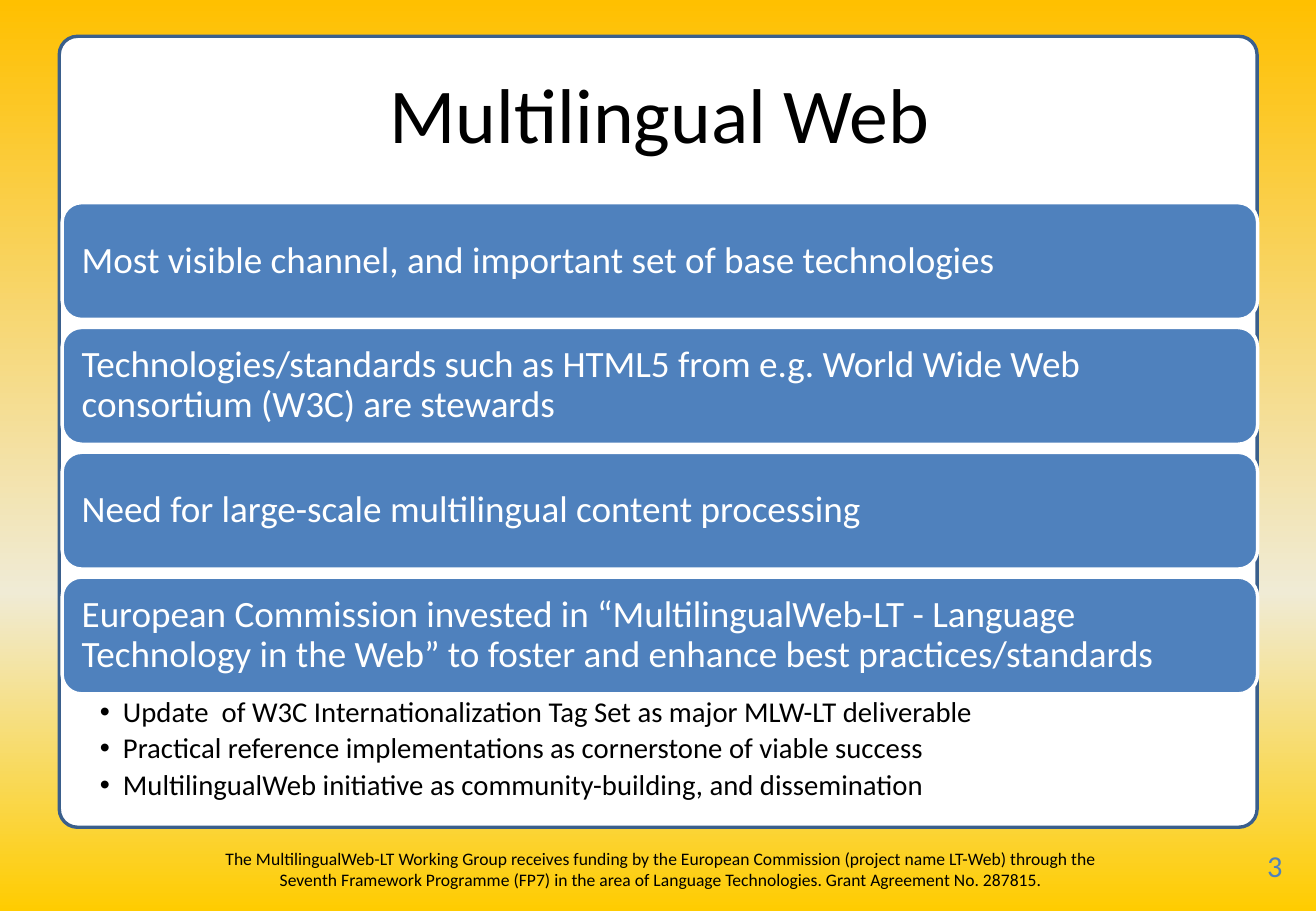
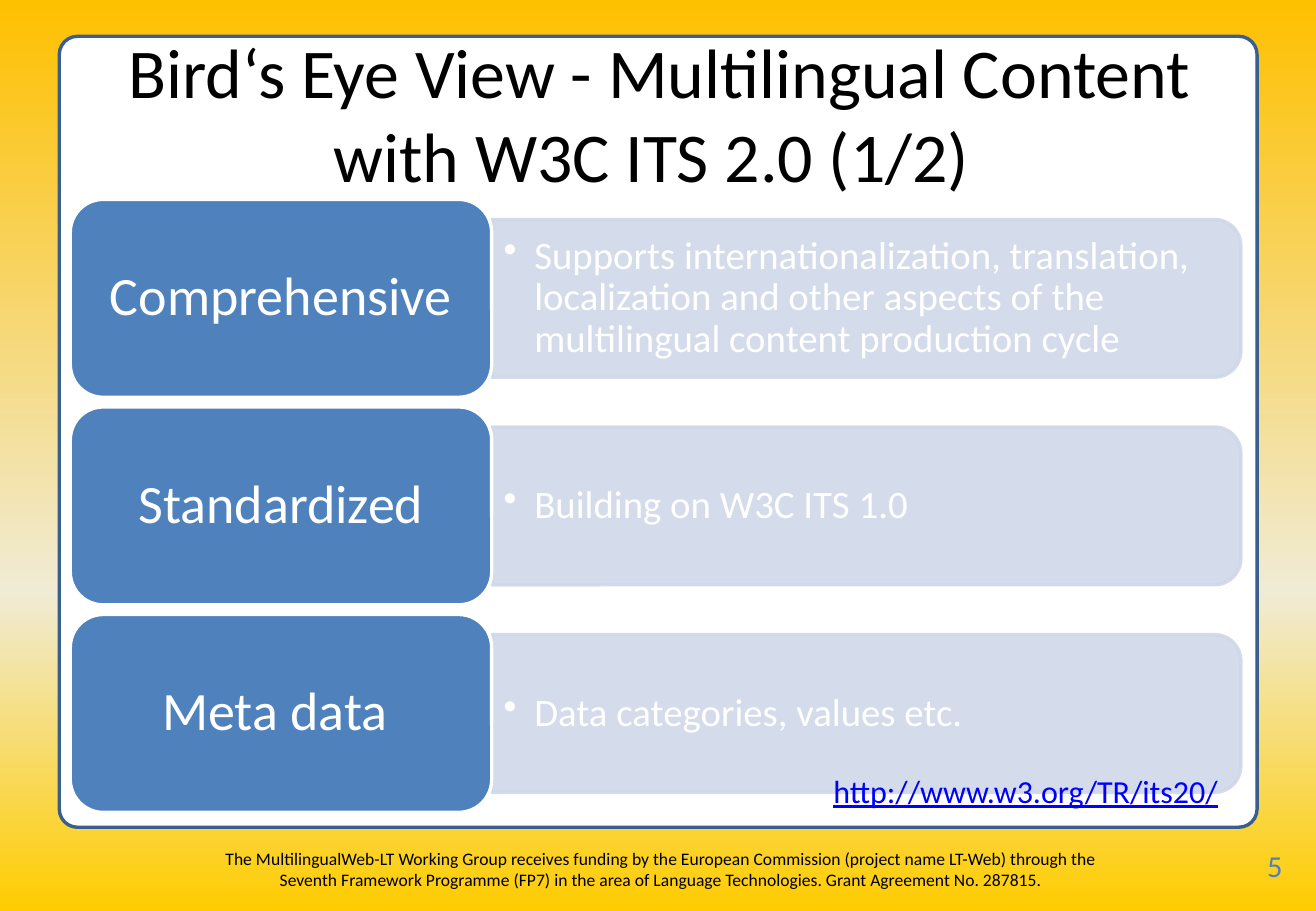
from lxml.etree import SubElement
from pptx import Presentation
from pptx.dml.color import RGBColor
from pptx.enum.shapes import MSO_SHAPE
from pptx.enum.text import MSO_ANCHOR, MSO_AUTO_SIZE, PP_ALIGN
from pptx.oxml.ns import qn
from pptx.util import Cm, Pt

COLORS = {
    "gold": "FFC000", "cream": "F0EBD5", "yellow": "FFCC00",
    "white": "FFFFFF", "black": "000000", "blue": "4F81BD",
    "frame": "3A5F8C", "pale": "D0D8E8", "link": "0000FF",
}
FONT = "Calibri"
FOOTER = ("The MultilingualWeb-LT Working Group receives funding by the European "
          "Commission (project name LT-Web) through the Seventh Framework Programme "
          "(FP7) in the area of Language Technologies. Grant Agreement No. 287815.")
TITLE_AND_BODY, TITLE_ONLY = 1, 5


def rgb(name):
    return RGBColor.from_string(COLORS[name])


def write_text(shape, text, size, color="black", align=PP_ALIGN.LEFT,
               anchor=MSO_ANCHOR.TOP, insets=(0.25, 0.13, 0.25, 0.13), spacing=1.0,
               after=0, bullet=None, underline=None, wrap=True):
    """Fill a shape with one paragraph per line; bullet is the hanging indent in cm."""
    frame = shape.text_frame
    frame.auto_size = MSO_AUTO_SIZE.NONE
    frame.word_wrap = wrap
    frame.vertical_anchor = anchor
    (frame.margin_left, frame.margin_top,
     frame.margin_right, frame.margin_bottom) = map(Cm, insets)
    frame.text = text
    for paragraph in frame.paragraphs:
        if bullet:
            properties = paragraph._p.get_or_add_pPr()
            properties.set("marL", str(Cm(bullet)))
            properties.set("indent", str(-Cm(bullet)))
            SubElement(properties, qn("a:buChar"), char="•")
        paragraph.alignment = align
        paragraph.line_spacing = spacing
        paragraph.space_before = Pt(0)
        paragraph.space_after = Pt(after)
        for run in paragraph.runs:
            run.font.name = FONT
            run.font.size = Pt(size)
            run.font.color.rgb = rgb(color)
            run.font.underline = underline


class Deck:
    """Holds the shared style and the slide being built."""

    def __init__(self):
        self.presentation = Presentation()
        self.presentation.slide_width = Cm(27.51)
        self.presentation.slide_height = Cm(19.05)
        self.slide = None
        self.set_background()

    def set_background(self):
        master = self.presentation.slide_master
        fill = master.background.fill
        fill.gradient()
        fill.gradient_angle = 270
        stops = master.element.find(".//" + qn("a:gsLst"))
        stops.clear()
        for position, name in ((0, "gold"), (65, "cream"), (100, "yellow")):
            stop = SubElement(stops, qn("a:gs"), pos=str(position * 1000))
            SubElement(stop, qn("a:srgbClr"), val=COLORS[name])

    def new_slide(self, layout, title, title_size, number):
        layouts = self.presentation.slide_layouts
        self.slide = self.presentation.slides.add_slide(layouts[layout])
        # White panel goes behind the placeholders
        panel = self.shape(MSO_SHAPE.ROUNDED_RECTANGLE, 1.24, 0.76, 25.04, 16.54,
                           "white", "frame")
        panel.adjustments[0] = 0.023
        self.slide.shapes._spTree.insert(2, panel._element)
        # Title, footer and slide number
        self.placeholder(0, 1.3, 0.76, 24.97, 3.18, title, size=title_size,
                         align=PP_ALIGN.CENTER, anchor=MSO_ANCHOR.MIDDLE)
        self.text(4.11, 17.6, 19.41, 1.02, FOOTER, size=10.4, align=PP_ALIGN.CENTER)
        self.text(26.44, 17.68, 1.12, 1.02, number, size=18, color="blue",
                  insets=(0.05, 0.03, 0.05, 0.03))

    def placeholder(self, index, left, top, width, height, text, **text_format):
        shape = self.slide.placeholders[index]
        shape.left, shape.top = Cm(left), Cm(top)
        shape.width, shape.height = Cm(width), Cm(height)
        write_text(shape, text, **text_format)

    def text(self, left, top, width, height, text, **text_format):
        shape = self.slide.shapes.add_textbox(Cm(left), Cm(top), Cm(width), Cm(height))
        write_text(shape, text, **text_format)

    def shape(self, kind, left, top, width, height, fill, line, opacity=None):
        shape = self.slide.shapes.add_shape(kind, Cm(left), Cm(top), Cm(width), Cm(height))
        shape.shadow.inherit = False
        shape.fill.solid()
        shape.fill.fore_color.rgb = rgb(fill)
        shape.line.color.rgb = rgb(line)
        shape.line.width = Pt(2)
        if opacity:
            for color in shape._element.spPr.iter(qn("a:srgbClr")):
                SubElement(color, qn("a:alpha"), val=str(opacity * 1000))
        return shape

    def box(self, left, top, width, height, text, **text_format):
        shape = self.shape(MSO_SHAPE.ROUNDED_RECTANGLE, left, top, width, height,
                           "blue", "white")
        write_text(shape, text, color="white", anchor=MSO_ANCHOR.MIDDLE,
                   spacing=0.9, **text_format)

    def detail_bar(self, left, top, width, height, text):
        # A quarter turn puts the two rounded corners on the right
        bar = self.shape(MSO_SHAPE.ROUND_2_SAME_RECTANGLE,
                         left + (width - height) / 2, top + (height - width) / 2,
                         height, width, "pale", "pale", opacity=90)
        bar.rotation = 90
        self.text(left, top + 0.16, width - 0.16, height - 0.32, text, size=23,
                  color="white", anchor=MSO_ANCHOR.MIDDLE, spacing=0.9, bullet=0.64)


def build_multilingual_web(deck):
    deck.new_slide(TITLE_AND_BODY, "Multilingual Web", 46, "3")
    statements = (
        "Most visible channel, and important set of base technologies",
        "Technologies/standards such as HTML5 from e.g. World Wide Web "
        "consortium (W3C) are stewards",
        "Need for large-scale multilingual content processing",
        "European Commission invested in “MultilingualWeb-LT - Language Technology "
        "in the Web” to foster and enhance best practices/standards",
    )
    for row, statement in enumerate(statements):
        deck.box(1.3, 4.24 + 2.61 * row, 24.99, 2.44, statement, size=22,
                 insets=(0.29, 0.29, 0.29, 0.29))
    results = (
        "Update  of W3C Internationalization Tag Set as major MLW-LT deliverable",
        "Practical reference implementations as cornerstone of viable success",
        "MultilingualWeb initiative as community-building, and dissemination",
    )
    deck.placeholder(1, 1.3, 14.5, 24.99, 2.46, "\n".join(results), size=17,
                     insets=(0.79, 0.08, 0.43, 0.08), spacing=0.9, after=3.4, bullet=0.48)


def build_birds_eye_view(deck):
    deck.new_slide(TITLE_ONLY, "Bird‘s Eye View - Multilingual Content "
                   "with W3C ITS 2.0 (1/2) ", 41.4, "5")
    features = (
        ("Comprehensive", "Supports internationalization, translation, localization and "
         "other aspects of the multilingual content production cycle"),
        ("Standardized", "Building on W3C ITS 1.0"),
        ("Meta data ", "Data categories, values etc."),
    )
    for row, (label, detail) in enumerate(features):
        top = 4.17 + 4.34 * row
        deck.detail_bar(10.28, top + 0.42, 15.66, 3.3, detail)
        deck.box(1.47, top, 8.81, 4.14, label, size=32, align=PP_ALIGN.CENTER,
                 insets=(0.33, 0.18, 0.33, 0.18))
    deck.text(17.17, 16, 8.69, 1.07, "http://www.w3.org/TR/its20/", size=19,
              color="link", underline=True, wrap=False)


def main():
    deck = Deck()
    build_multilingual_web(deck)
    build_birds_eye_view(deck)
    deck.presentation.save("out.pptx")


if __name__ == "__main__":
    main()
